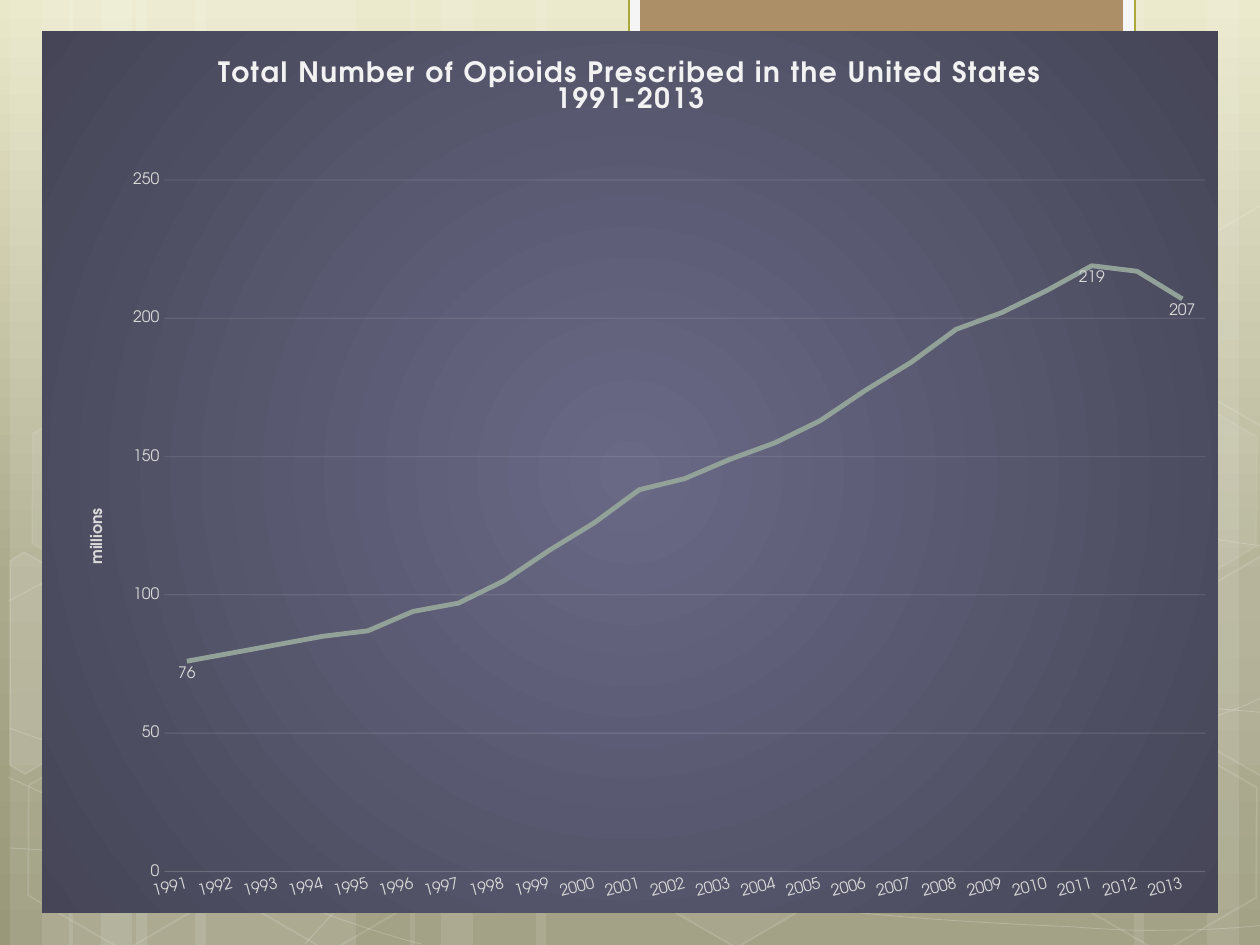
"""Build a slide with a line chart of opioid prescriptions over a striped, hexagon-patterned ground."""
import copy

import lxml.etree
import pptx
import pptx.chart.data
import pptx.dml.color
import pptx.enum.chart
import pptx.enum.shapes
import pptx.oxml
import pptx.oxml.ns
import pptx.util

RGBColor = pptx.dml.color.RGBColor
WHITE = RGBColor(0xFF, 0xFF, 0xFF)
NEAR_WHITE = RGBColor(0xF2, 0xF2, 0xF2)
LABEL_GREY = RGBColor(0xD9, 0xD9, 0xD9)
TAB_WHITE = RGBColor(0xF5, 0xF5, 0xF5)
TAB_OLIVE = RGBColor(0xAC, 0xA7, 0x3B)
TAB_BROWN = RGBColor(0xAD, 0x8F, 0x67)
SERIES_GREEN = RGBColor(0x93, 0xA2, 0x99)
TEXT_DARK = RGBColor(0x29, 0x29, 0x34)
GROUND_STOPS = [
    (0, RGBColor(0xE9, 0xE8, 0xC8)),
    (0.62, RGBColor(0xAC, 0xAA, 0x8C)),
    (1, RGBColor(0x99, 0x98, 0x79)),
]
FONT = "TeX Gyre Adventor"
PX = 914400 / 126
qn = pptx.oxml.ns.qn


def set_alpha(element, percent):
    for color in element.iter(qn("a:srgbClr")):
        lxml.etree.SubElement(color, qn("a:alpha")).set("val", str(percent * 1000))


def paint_white(shape, fill_alpha, line_alpha, line_width):
    shape.shadow.inherit = False
    if fill_alpha:
        shape.fill.solid()
        shape.fill.fore_color.rgb = WHITE
        set_alpha(shape._element.spPr.find(qn("a:solidFill")), fill_alpha)
    else:
        shape.fill.background()
    if line_alpha:
        shape.line.width = pptx.util.Pt(line_width)
        shape.line.color.rgb = WHITE
        set_alpha(shape._element.spPr.find(qn("a:ln")), line_alpha)
    else:
        shape.line.fill.background()


presentation = pptx.Presentation()
presentation.slide_width = pptx.util.Inches(10)
presentation.slide_height = pptx.util.Inches(7.5)
slide = presentation.slides.add_slide(presentation.slide_layouts[6])
shapes = slide.shapes
RECTANGLE = pptx.enum.shapes.MSO_SHAPE.RECTANGLE
HEXAGON = pptx.enum.shapes.MSO_SHAPE.HEXAGON

ground = slide.background.fill
ground.gradient()
ground.gradient_angle = 270
first_stop = ground.gradient_stops[0]._gs
first_stop.addnext(copy.deepcopy(first_stop))
for stop, (position, color) in zip(ground.gradient_stops, GROUND_STOPS):
    stop.position = position
    stop.color.rgb = color

stripes = [(136, 220), (10, 63), (42, 105), (195, 220), (69, 63), (101, 105),
           (924, 220), (1207, 63), (1134, 105), (536, 388), (410, 63), (441, 105)]
for left, width in stripes:
    stripe = shapes.add_shape(RECTANGLE, int(left * PX), 0, int(width * PX), int(945 * PX))
    paint_white(stripe, 10, 0, 0)

curves = [
    [(9, 848), (77, 852), (145, 856), (239, 854), (334, 853), (451, 851), (577, 838),
     (703, 825), (882, 801), (998, 777), (1113, 753), (1231, 715), (1269, 694)],
    [(9, 601), (45, 581), (82, 562), (152, 543), (224, 524), (326, 499), (437, 488),
     (549, 479), (685, 478), (824, 488), (963, 498), (1193, 537), (1269, 547)],
    [(8, 777), (160, 847), (311, 916), (421, 944)],
    [(9, 728), (48, 742), (88, 756), (161, 776), (234, 795), (344, 827), (450, 848),
     (554, 869), (687, 892), (791, 905), (896, 919), (1008, 924), (1075, 927),
     (1140, 932), (1158, 930), (1191, 930), (1223, 929), (1246, 927), (1269, 925)],
    [(305, 944), (328, 919), (350, 893), (381, 871), (411, 848), (454, 823), (489, 805),
     (524, 788), (546, 780), (592, 767), (638, 754), (722, 737), (766, 728),
     (811, 719), (818, 719), (857, 717), (896, 714), (958, 709), (1000, 708),
     (1045, 707), (1116, 708), (1116, 708), (1144, 708), (1173, 708), (1201, 708),
     (1223, 709), (1245, 711), (1256, 712), (1268, 713), (1264, 712), (1268, 713)],
]
for knots in curves:
    builder = shapes.build_freeform(*knots[0], scale=PX)
    builder.add_line_segments(knots[1:], close=False)
    curve = builder.convert_to_shape()
    segments = curve._element.findall(".//" + qn("a:lnTo"))
    for start in range(0, len(segments), 3):
        bezier = lxml.etree.Element(qn("a:cubicBezTo"))
        segments[start].addprevious(bezier)
        for segment in segments[start:start + 3]:
            bezier.append(segment[0])
            segment.getparent().remove(segment)
    paint_white(curve, 0, 20, 0.5)

hexagons = [(626, 742, 6, 12), (14, 745, 0, 12), (18, 393, 7, 8),
            (219, 746, 0, 12), (1051, 747, 0, 12), (1051, 396, 7, 8)]
for left, top, fill_alpha, line_alpha in hexagons:
    hexagon = shapes.add_shape(HEXAGON, int(left * PX), int(top * PX), int(220 * PX), int(191 * PX))
    hexagon.adjustments[0] = 0.285
    hexagon.adjustments[1] = 1.155
    hexagon.rotation = 30
    paint_white(hexagon, fill_alpha, line_alpha, 1)

cut_hexagons = [
    (10, [(10, 561), (24, 552), (121, 607), (120, 718), (25, 774), (10, 765)]),
    (4, [(1167, 611), (1261, 556), (1271, 562), (1271, 772), (1263, 777), (1167, 722)]),
    (0, [(1167, 261), (1261, 205), (1273, 212), (1271, 422), (1263, 427), (1167, 372)]),
]
for fill_alpha, corners in cut_hexagons:
    builder = shapes.build_freeform(*corners[0], scale=PX)
    builder.add_line_segments(corners[1:], close=True)
    paint_white(builder.convert_to_shape(), fill_alpha, 12, 1)

for left, width, height, color, outline in [(629, 506, 96, TAB_WHITE, TAB_OLIVE),
                                            (640, 483, 86, TAB_BROWN, None)]:
    tab = shapes.add_shape(RECTANGLE, int(left * PX), int(-3 * PX), int(width * PX), int(height * PX))
    tab.shadow.inherit = False
    tab.fill.solid()
    tab.fill.fore_color.rgb = color
    if outline:
        tab.line.color.rgb = outline
        tab.line.width = pptx.util.Pt(1.25)
    else:
        tab.line.fill.background()

chart_data = pptx.chart.data.CategoryChartData()
chart_data.categories = [str(year) for year in range(1991, 2014)]
chart_data.add_series("Series 1", [76, 79, 82, 85, 87, 94, 97, 105, 116, 126, 138, 142,
                                   149, 155, 163, 174, 184, 196, 202, 210, 219, 217, 207])
chart = shapes.add_chart(pptx.enum.chart.XL_CHART_TYPE.LINE, int(42 * PX), int(31 * PX),
                         int(1176 * PX), int(882 * PX), chart_data).chart
chart.has_legend = False
chart.font.name = FONT
chart.font.size = pptx.util.Pt(10)
chart.font.color.rgb = TEXT_DARK

category_axis, value_axis = chart.category_axis, chart.value_axis
for axis in (category_axis, value_axis):
    axis.major_tick_mark = axis.minor_tick_mark = pptx.enum.chart.XL_TICK_MARK.NONE
    axis.tick_labels.font.name = FONT
    axis.tick_labels.font.size = pptx.util.Pt(9)
    axis.tick_labels.font.color.rgb = LABEL_GREY
category_axis._element.find(qn("c:txPr")).find(qn("a:bodyPr")).set("rot", "-900000")
value_axis.minimum_scale, value_axis.maximum_scale, value_axis.major_unit = 0, 250, 50
value_axis.format.line.fill.background()
for line in (category_axis.format.line, value_axis.major_gridlines.format.line):
    line.color.rgb = NEAR_WHITE
    line.width = pptx.util.Pt(0.75)
set_alpha(category_axis._element.find(qn("c:spPr")), 10)
set_alpha(value_axis._element.find(qn("c:majorGridlines")), 10)

titles = [(chart.chart_title, "Total Number of Opioids Prescribed in the United States\n1991-2013", 16, NEAR_WHITE, 100),
          (value_axis.axis_title, "millions", 9, LABEL_GREY, 0)]
for title, text, size, color, spacing in titles:
    title.text_frame.text = text
    for paragraph in title.text_frame.paragraphs:
        for run in paragraph.runs:
            run.font.name = FONT
            run.font.size = pptx.util.Pt(size)
            run.font.bold = True
            run.font.color.rgb = color
            run.font._element.set("spc", str(spacing))
chart.chart_title.include_in_layout = False

series = chart.plots[0].series[0]
series.smooth = False
series.format.line.color.rgb = SERIES_GREEN
series.format.line.width = pptx.util.Pt(2.75)
series.data_labels.show_value = False
for index in (0, 20, 22):
    label = series.points[index].data_label
    label.position = pptx.enum.chart.XL_LABEL_POSITION.BELOW
    label.font.name = FONT
    label.font.size = pptx.util.Pt(9)
    label.font.color.rgb = LABEL_GREY

chart_space = chart._chartSpace
layouts = [(chart_space.find(".//" + qn("c:plotArea")), 0,
            {"layoutTarget": "inner", "xMode": "edge", "yMode": "edge", "x": 0.104, "y": 0.169, "w": 0.885, "h": 0.784}),
           (value_axis._element.find(qn("c:title")), 1,
            {"xMode": "edge", "yMode": "edge", "x": 0.037, "y": 0.538})]
for parent, position, settings in layouts:
    for old_layout in parent.findall(qn("c:layout")):
        parent.remove(old_layout)
    layout = lxml.etree.Element(qn("c:layout"))
    manual = lxml.etree.SubElement(layout, qn("c:manualLayout"))
    for name, value in settings.items():
        lxml.etree.SubElement(manual, qn("c:" + name)).set("val", str(value))
    parent.insert(position, layout)

chart_space.find(qn("c:chart")).addnext(pptx.oxml.parse_xml(
    f'<c:spPr {pptx.oxml.ns.nsdecls("c", "a")}><a:gradFill><a:gsLst>'
    '<a:gs pos="0"><a:srgbClr val="696986"/></a:gs><a:gs pos="100000"><a:srgbClr val="454557"/></a:gs></a:gsLst>'
    '<a:path path="circle"><a:fillToRect l="50000" t="50000" r="50000" b="50000"/></a:path>'
    '</a:gradFill><a:ln><a:noFill/></a:ln></c:spPr>'))

presentation.save("out.pptx")
